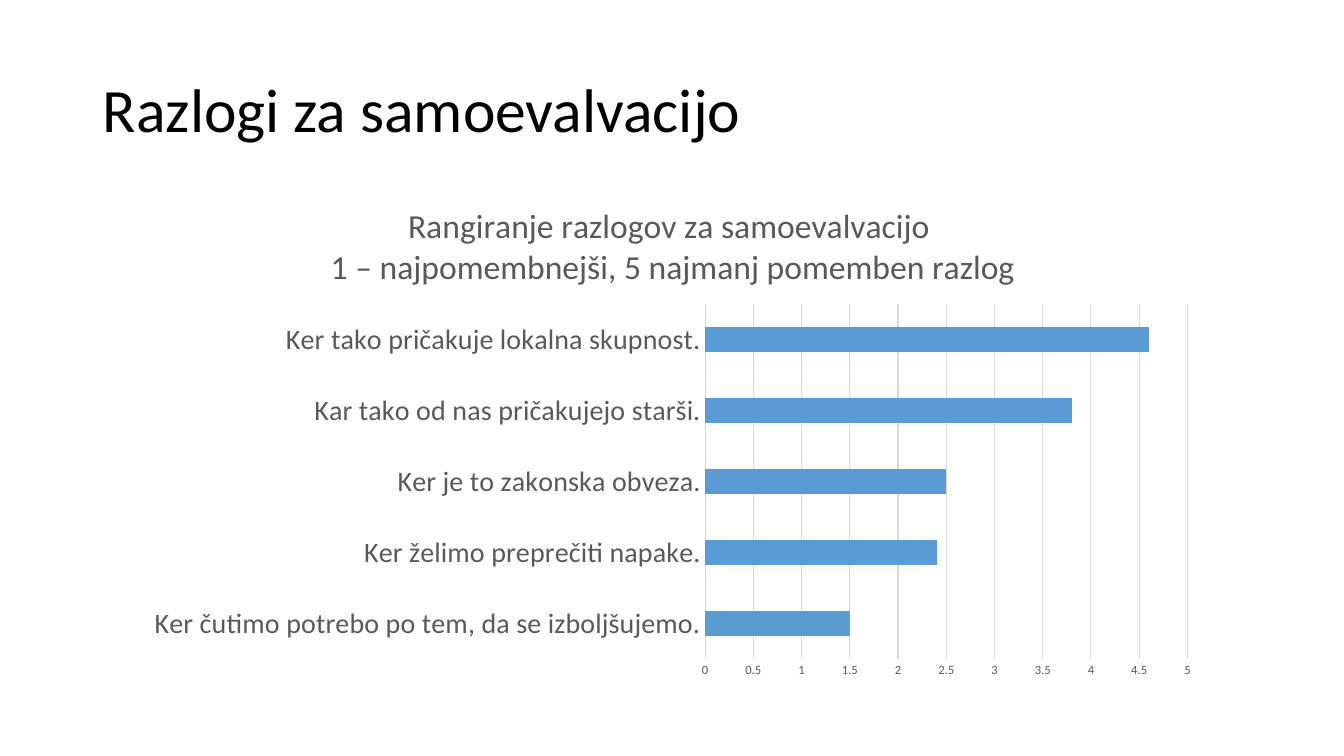
from pptx import Presentation
from pptx.chart.data import CategoryChartData
from pptx.dml.color import RGBColor
from pptx.enum.chart import XL_CHART_TYPE as ChartType, XL_TICK_MARK as TickMark
from pptx.enum.text import MSO_ANCHOR as Anchor, PP_ALIGN as Align
from pptx.util import Inches, Pt

FONT = "Calibri"
COLORS = {"title": "000000", "label": "595959", "grid": "D9D9D9", "bar": "5B9BD5"}
REASONS = {
    "Ker čutimo potrebo po tem, da se izboljšujemo.": 1.5,
    "Ker želimo preprečiti napake.": 2.4,
    "Ker je to zakonska obveza.": 2.5,
    "Kar tako od nas pričakujejo starši.": 3.8,
    "Ker tako pričakuje lokalna skupnost.": 4.6,
}
CHART_TITLE = [
    "Rangiranje razlogov za samoevalvacijo ",
    "1 – najpomembnejši, 5 najmanj pomemben razlog",
]


def color(name):
    return RGBColor.from_string(COLORS[name])


def style_font(font, size, color_name):
    font.name = FONT
    font.size = Pt(size)
    font.bold = False
    font.color.rgb = color(color_name)


def style_line(line):
    line.color.rgb = color("grid")
    line.width = Pt(0.75)


def place(deck, left, top, width, height):
    """Turn shares of the slide's size into lengths."""
    return [int(share * side) for share, side in zip(
        (left, top, width, height), (deck.slide_width, deck.slide_height) * 2)]


def add_run(para, text, size, color_name):
    span = para.add_run()
    span.text = text
    style_font(span.font, size, color_name)


def fill_title(deck, page, text):
    box = page.shapes.title
    box.left, box.top, box.width, box.height = place(deck, 0.069, 0.053, 0.863, 0.193)
    frame = box.text_frame
    frame.word_wrap = True
    frame.vertical_anchor = Anchor.MIDDLE
    para = frame.paragraphs[0]
    para.alignment = Align.LEFT
    para.line_spacing = 0.9
    add_run(para, text, 44, "title")


def style_axis(axis, size):
    axis.major_tick_mark = axis.minor_tick_mark = TickMark.NONE
    style_font(axis.tick_labels.font, size, "label")


def add_chart_title(chart, lines):
    frame = chart.chart_title.text_frame
    for number, line in enumerate(lines):
        para = frame.add_paragraph() if number else frame.paragraphs[0]
        add_run(para, line, 24, "label")
    chart.chart_title.include_in_layout = False


def add_bar_chart(deck, page, values, title_lines):
    data = CategoryChartData()
    data.categories = list(values)
    data.add_series("Series 1", list(values.values()))
    area = place(deck, 0.099, 0.247, 0.803, 0.663)
    chart = page.shapes.add_chart(ChartType.BAR_CLUSTERED, *area, data).chart
    style_font(chart.font, 10, "title")
    chart.has_legend = False
    add_chart_title(chart, title_lines)

    plot = chart.plots[0]
    plot.gap_width = 182
    plot.vary_by_categories = False
    fill = plot.series[0].format.fill
    fill.solid()
    fill.fore_color.rgb = color("bar")

    style_axis(chart.category_axis, 20)
    style_line(chart.category_axis.format.line)

    scale = chart.value_axis
    style_axis(scale, 9)
    scale.minimum_scale, scale.maximum_scale, scale.major_unit = 0, 5, 0.5
    scale.tick_labels.number_format = "General"
    scale.tick_labels.number_format_is_linked = False
    scale.format.line.fill.background()
    style_line(scale.major_gridlines.format.line)


def main():
    deck = Presentation()
    deck.slide_width, deck.slide_height = Inches(13.33), Inches(7.5)
    page = deck.slides.add_slide(deck.slide_layouts.get_by_name("Title Only"))
    fill_title(deck, page, "Razlogi za samoevalvacijo")
    add_bar_chart(deck, page, REASONS, CHART_TITLE)
    deck.save("out.pptx")


if __name__ == "__main__":
    main()
